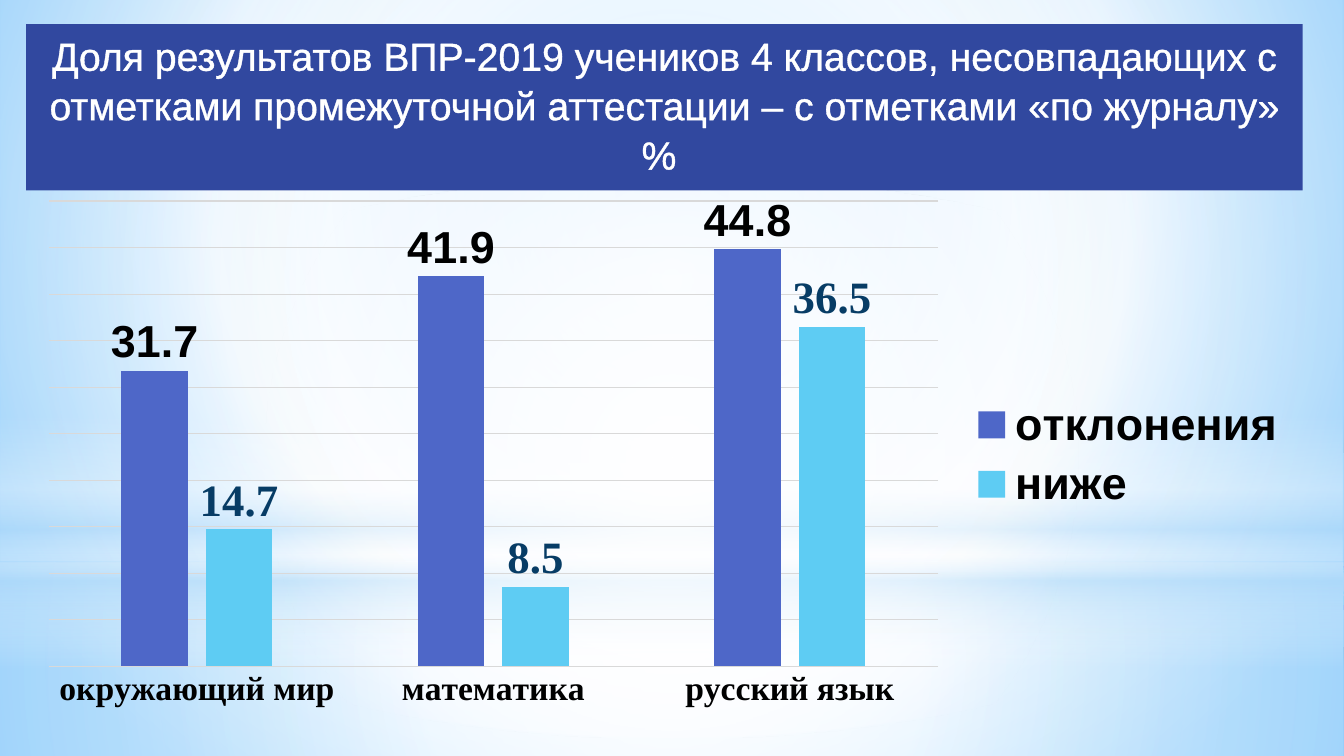
"""Build the slide comparing test results with school register marks."""
from dataclasses import dataclass

from lxml.etree import SubElement
from pptx import Presentation
from pptx.chart.data import CategoryChartData
from pptx.dml.color import RGBColor
from pptx.enum.chart import XL_CHART_TYPE as ChartType
from pptx.enum.chart import XL_LABEL_POSITION as LabelPosition
from pptx.enum.chart import XL_LEGEND_POSITION as LegendPosition
from pptx.enum.chart import XL_TICK_MARK as TickMark
from pptx.enum.shapes import MSO_SHAPE as Preset
from pptx.enum.text import MSO_ANCHOR as Anchor
from pptx.enum.text import MSO_AUTO_SIZE as AutoSize
from pptx.enum.text import PP_ALIGN as Align
from pptx.oxml import parse_xml
from pptx.oxml.ns import nsdecls, qn
from pptx.util import Inches, Pt


@dataclass(frozen=True)
class Theme:
    sans: str = "Arial"
    serif: str = "Times New Roman"
    white: str = "FFFFFF"
    black: str = "000000"
    banner: str = "31489F"
    grid: str = "D9D9D9"
    deviation: str = "4E67C8"
    below: str = "5ECCF3"
    below_label: str = "073C65"
    sky: str = "B4DCFA"
    title_size: int = 28
    label_size: int = 32
    category_size: int = 24
    base_size: int = 10


THEME = Theme()
TITLE = ("Доля результатов ВПР-2019 учеников 4 классов, несовпадающих с отметками "
         "промежуточной аттестации – с отметками «по журналу» % ")
TITLE_BOX = (0.26, 0.24, 12.66, 1.65)
CHART_BOX = (0.23, 1.89, 12.67, 5.24)
SUBJECTS = ["окружающий мир", "математика", "русский язык"]
SERIES = [
    ("отклонения", [31.7, 41.9, 44.8], THEME.deviation, THEME.black, THEME.sans),
    ("ниже", [14.7, 8.5, 36.5], THEME.below, THEME.below_label, THEME.serif),
]
CENTRE = (50, 50, 50, 50)
BACKDROP = ([(0, "9ED5FF", 100), (60, THEME.white, 100), (100, "5BB9FF", 100)],
            (20, 10, 20, 60))
GLOWS = [
    (Preset.RECTANGLE, (0, 5.58, 13.33, 1.92),
     [(0, THEME.white, 91), (37, THEME.white, 76), (100, THEME.sky, 79)], CENTRE),
    (Preset.RECTANGLE, (0, 0, 13.33, 5.58),
     [(0, THEME.white, 89), (48, THEME.white, 62), (100, THEME.sky, 79)], CENTRE),
    (Preset.RECTANGLE, (0, 4.12, 13.33, 2.5),
     [(0, THEME.white, 0), (29, THEME.white, 30), (45, THEME.sky, 40),
      (55, THEME.white, 26), (65, THEME.sky, 60), (100, THEME.white, 0)], None),
    (Preset.OVAL, (0, 1.75, 13.33, 5.58),
     [(0, THEME.white, 100), (56, THEME.white, 0)], CENTRE),
]


def rgb(color):
    return RGBColor.from_string(color)


def inches(box):
    return [Inches(length) for length in box]


def style_font(font, size, color, name, bold=False):
    font.size, font.name, font.bold = Pt(size), name, bold
    font.color.rgb = rgb(color)


def style_line(line, color):
    line.width = Pt(0.75)
    line.color.rgb = rgb(color)


def paint_gradient(fill, element, stops, focus):
    """Fill with a circular gradient around focus, or a vertical one without it."""
    fill.solid()
    gradient = parse_xml(f'<a:gradFill {nsdecls("a")} rotWithShape="1"/>')
    stop_list = SubElement(gradient, qn("a:gsLst"))
    for position, color, opacity in stops:
        stop = SubElement(stop_list, qn("a:gs"), pos=str(position * 1000))
        tint = SubElement(stop, qn("a:srgbClr"), val=color)
        if opacity < 100:
            SubElement(tint, qn("a:alpha"), val=str(opacity * 1000))
    if focus:
        circle = SubElement(gradient, qn("a:path"), path="circle")
        edges = {side: str(share * 1000) for side, share in zip("ltrb", focus)}
        SubElement(circle, qn("a:fillToRect"), edges)
    else:
        SubElement(gradient, qn("a:lin"), ang="5400000", scaled="0")
    solid = element.xpath(".//a:solidFill")[0]
    solid.getparent().replace(solid, gradient)


def add_backdrop(slide):
    paint_gradient(slide.background.fill, slide.element, *BACKDROP)
    for preset, box, stops, focus in GLOWS:
        glow = slide.shapes.add_shape(preset, *inches(box))
        glow.shadow.inherit = False
        glow.line.fill.background()
        paint_gradient(glow.fill, glow.element, stops, focus)


def add_title(slide):
    title = slide.shapes.title
    title.left, title.top, title.width, title.height = inches(TITLE_BOX)
    title.fill.solid()
    title.fill.fore_color.rgb = rgb(THEME.banner)
    frame = title.text_frame
    frame.word_wrap, frame.auto_size = True, AutoSize.NONE
    frame.vertical_anchor = Anchor.TOP
    paragraph = frame.paragraphs[0]
    paragraph.alignment, paragraph.line_spacing = Align.CENTER, 1.05
    run = paragraph.add_run()
    run.text = TITLE
    style_font(run.font, THEME.title_size, THEME.white, THEME.sans)
    outline = parse_xml(
        f'<a:ln {nsdecls("a")} w="{Pt(1.45)}"><a:solidFill>'
        f'<a:srgbClr val="{THEME.white}"/></a:solidFill></a:ln>')
    run.font.fill
    run.element.get_or_add_rPr().insert(0, outline) if hasattr(run, "element") else \
        paragraph._p.xpath("./a:r/a:rPr")[0].insert(0, outline)
    slide.shapes.element.append(title.element)


def add_results_chart(slide):
    data = CategoryChartData(number_format="General")
    data.categories = SUBJECTS
    for name, values, *_ in SERIES:
        data.add_series(name, values)
    chart = slide.shapes.add_chart(
        ChartType.COLUMN_CLUSTERED, *inches(CHART_BOX), data).chart
    chart.has_title = False
    style_font(chart.font, THEME.base_size, THEME.black, THEME.sans)

    chart.has_legend = True
    chart.legend.position = LegendPosition.RIGHT
    chart.legend.include_in_layout = False
    style_font(chart.legend.font, THEME.label_size, THEME.black, THEME.sans, True)

    subject_axis, value_axis = chart.category_axis, chart.value_axis
    subject_axis.major_tick_mark = TickMark.NONE
    style_font(subject_axis.tick_labels.font, THEME.category_size,
               THEME.black, THEME.serif, True)
    style_line(subject_axis.format.line, THEME.grid)
    value_axis.visible = False
    value_axis.minimum_scale, value_axis.maximum_scale = 0, 50
    value_axis.major_unit = 5
    style_line(value_axis.major_gridlines.format.line, THEME.grid)

    plot = chart.plots[0]
    plot.gap_width, plot.overlap, plot.vary_by_categories = 219, -27, False
    for series, (_, _, color, label_color, label_font) in zip(plot.series, SERIES):
        series.format.fill.solid()
        series.format.fill.fore_color.rgb = rgb(color)
        labels = series.data_labels
        labels.show_value = True
        labels.position = LabelPosition.OUTSIDE_END
        style_font(labels.font, THEME.label_size, label_color, label_font, True)


def main():
    presentation = Presentation()
    presentation.slide_width, presentation.slide_height = Inches(13.33), Inches(7.5)
    slide = presentation.slides.add_slide(presentation.slide_layouts[5])
    add_backdrop(slide)
    add_title(slide)
    add_results_chart(slide)
    presentation.save("out.pptx")


if __name__ == "__main__":
    main()
